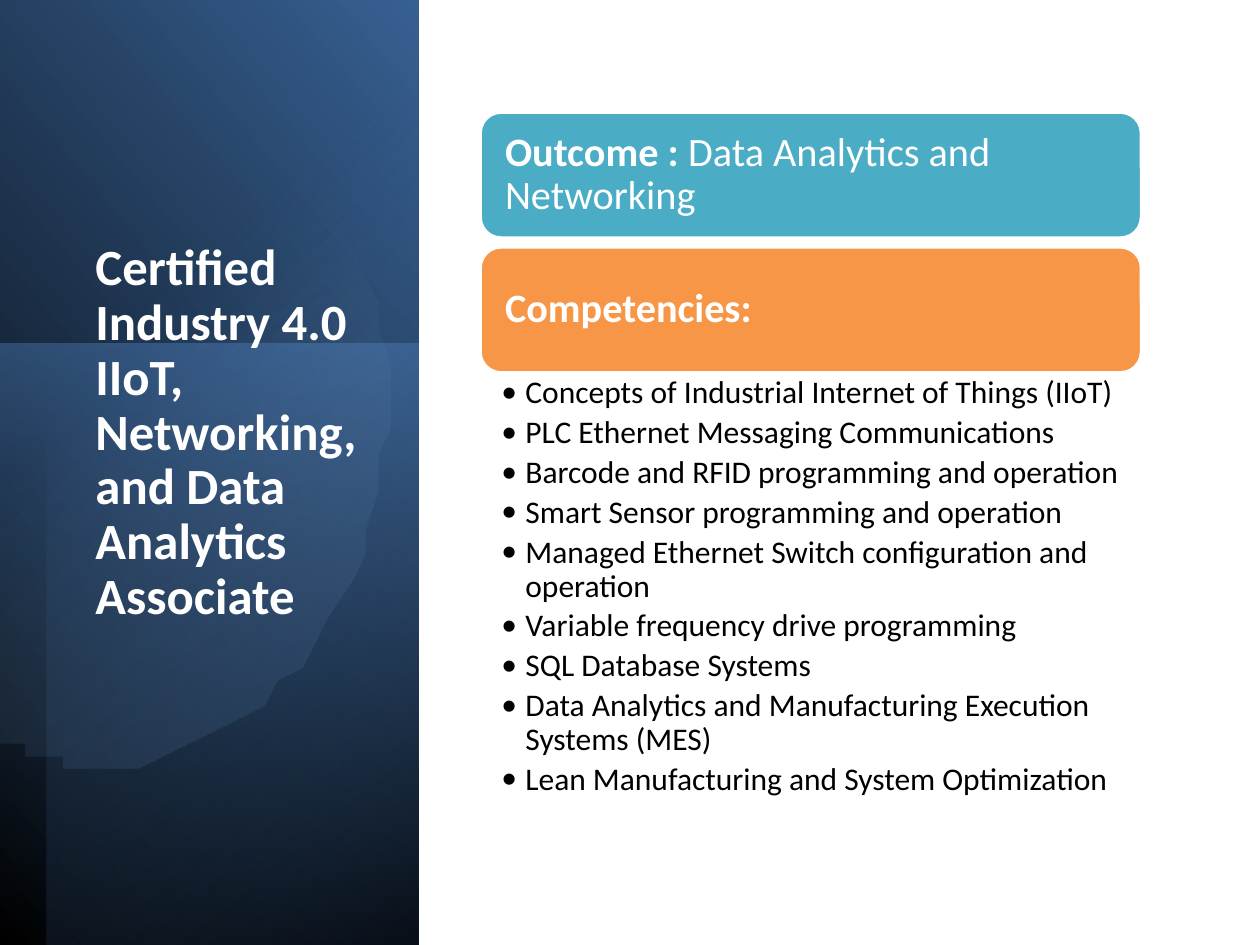
import lxml.etree as etree
import pptx
import pptx.dml.color
import pptx.enum.shapes
import pptx.enum.text
import pptx.oxml.ns
import pptx.util

CELL = pptx.util.Inches(0.1)  # the slide is a grid of 100 columns by 75 rows
COLUMNS, ROWS = 100, 75
FONT = "Calibri"
SHAPES = pptx.enum.shapes.MSO_SHAPE
ANCHOR = pptx.enum.text.MSO_ANCHOR
qn = pptx.oxml.ns.qn

TITLE = "Certified Industry 4.0 IIoT, Networking, and Data Analytics Associate"
BANNERS = [
    ("4BACC6", [("Outcome : ", True), ("Data Analytics and Networking", False)]),
    ("F79646", [("Competencies:", True)]),
]
COMPETENCIES = [
    "Concepts of Industrial Internet of Things (IIoT)",
    "PLC Ethernet Messaging Communications",
    "Barcode and RFID programming and operation",
    "Smart Sensor programming and operation",
    "Managed Ethernet Switch configuration and operation",
    "Variable frequency drive programming",
    "SQL Database Systems",
    "Data Analytics and Manufacturing Execution Systems (MES)",
    "Lean Manufacturing and System Optimization",
]
# Upright box, rotation, mirrored, gradient angle, stops (position, colour, opacity)
PANEL_LAYERS = [
    ((0, 0, 33.2, 75), 90, True, 310, [(0, "000000", 100), (100, "376092", 100)]),
    ((0, 27.3, 33.2, 47.7), 270, False, 190, [(0, "4F81BD", 50), (100, "254061", 0)]),
    ((3.7, 0, 29.5, 75), 270, True, 220, [(0, "000000", 59), (69, "4F81BD", 0)]),
]
ORB_START = (12, 8.9)
ORB_CURVES = [
    [(13.3, 8.8), (14.7, 8.9), (16, 9.1)],
    [(26.7, 11.3), (32.9, 24.7), (30, 38.9)],
    [(27.1, 53.1), (16.1, 62.8), (5.4, 60.7)],
    [(3.4, 60.2), (1.6, 59.4), (0, 58.3)],
]
ORB_END = [(0, 14.5), (2.5, 12.5)]
ORB_CLOSE = [(5.4, 10.4), (8.7, 9.1), ORB_START]


def color(value):
    return pptx.dml.color.RGBColor.from_string(value)


def cells(*values):
    return [int(value * CELL) for value in values]


def set_attributes(target, values):
    for name, value in values.items():
        setattr(target, name, value)


def fill_gradient(shape, angle, stops):
    """Gradient with per-stop opacity, turning with the shape."""
    shape.shadow.inherit = False
    shape.line.fill.background()
    shape.fill.background()
    properties = shape._element.spPr
    gradient = etree.Element(qn("a:gradFill"), rotWithShape="1")
    stop_list = etree.SubElement(gradient, qn("a:gsLst"))
    for position, value, opacity in stops:
        stop = etree.SubElement(stop_list, qn("a:gs"), pos=str(position * 1000))
        rgb = etree.SubElement(stop, qn("a:srgbClr"), val=value)
        etree.SubElement(rgb, qn("a:alpha"), val=str(opacity * 1000))
    etree.SubElement(gradient, qn("a:lin"), ang=str(angle * 60000), scaled="0")
    properties.replace(properties.find(qn("a:noFill")), gradient)


def curve_points(start, first, second, end, steps=16):
    for step in range(1, steps + 1):
        t = step / steps
        weights = ((1 - t) ** 3, 3 * t * (1 - t) ** 2, 3 * t * t * (1 - t), t ** 3)
        yield tuple(
            sum(weight * point[axis] for weight, point in
                zip(weights, (start, first, second, end)))
            for axis in (0, 1)
        )


def add_turned_layer(slide, box, rotation, mirrored, angle, stops):
    """Rectangle that fills the upright box after a quarter turn."""
    left, top, width, height = box
    shift = (height - width) / 2
    layer = slide.shapes.add_shape(
        SHAPES.RECTANGLE, *cells(left - shift, top + shift, height, width))
    layer.rotation = rotation
    if mirrored:
        layer._element.spPr.find(qn("a:xfrm")).set("flipH", "1")
    fill_gradient(layer, angle, stops)


def add_orb(slide):
    points = [ORB_START]
    for curve in ORB_CURVES:
        points.extend(curve_points(points[-1], *curve))
    points.extend(ORB_END)
    points.extend(curve_points(points[-1], *ORB_CLOSE))
    builder = slide.shapes.build_freeform(*points[0], scale=CELL)
    builder.add_line_segments(points[1:], close=True)
    fill_gradient(builder.convert_to_shape(), 52,
                  [(39, "95B3D7", 0), (100, "376092", 26)])


def write_runs(paragraph, runs, size, value):
    paragraph.line_spacing = 0.9
    for words, bold in runs:
        run = paragraph.add_run()
        run.text = words
        set_attributes(run.font, {"name": FONT, "size": pptx.util.Pt(size), "bold": bold})
        run.font.color.rgb = color(value)


def set_frame(frame, anchor, side, edge):
    side, edge = cells(side, edge)
    set_attributes(frame, {
        "word_wrap": True, "vertical_anchor": anchor,
        "margin_left": side, "margin_right": side,
        "margin_top": edge, "margin_bottom": edge,
    })


def add_title(slide, box):
    frame = slide.shapes.add_textbox(*cells(*box)).text_frame
    set_frame(frame, ANCHOR.TOP, 1, 0.5)
    write_runs(frame.paragraphs[0], [(TITLE, True)], 29, "FFFFFF")


def add_banner(slide, box, fill, runs):
    banner = slide.shapes.add_shape(SHAPES.ROUNDED_RECTANGLE, *cells(*box))
    banner.shadow.inherit = False
    banner.fill.solid()
    banner.fill.fore_color.rgb = color(fill)
    banner.line.color.rgb = color("FFFFFF")
    banner.line.width = pptx.util.Pt(2)
    set_frame(banner.text_frame, ANCHOR.MIDDLE, 1.5, 1.5)
    paragraph = banner.text_frame.paragraphs[0]
    paragraph.alignment = pptx.enum.text.PP_ALIGN.LEFT
    write_runs(paragraph, runs, 23, "FFFFFF")


def add_competencies(slide, box):
    frame = slide.shapes.add_textbox(*cells(*box)).text_frame
    set_frame(frame, ANCHOR.TOP, 1.7, 0.3)
    indent = cells(1.9)[0]
    for index, competency in enumerate(COMPETENCIES):
        paragraph = frame.add_paragraph() if index else frame.paragraphs[0]
        properties = paragraph._p.get_or_add_pPr()
        properties.set("marL", str(indent))
        properties.set("indent", str(-indent))
        etree.SubElement(properties, qn("a:buFont"), typeface=FONT)
        etree.SubElement(properties, qn("a:buChar"), char="•")
        paragraph.space_after = pptx.util.Pt(3.3)
        write_runs(paragraph, [(competency, False)], 18, "000000")


def add_title_panel(slide):
    for layer in PANEL_LAYERS:
        add_turned_layer(slide, *layer)
    add_orb(slide)
    add_title(slide, (6.6, 18.7, 23.6, 33.6))


def add_outcomes(slide, box):
    left, top, width, height = box
    banner_height, pitch = 10, 10.7
    for row, (fill, runs) in enumerate(BANNERS):
        add_banner(slide, (left, top + row * pitch, width, banner_height), fill, runs)
    used = pitch * (len(BANNERS) - 1) + banner_height
    add_competencies(slide, (left, top + used, width, height - used))


def main():
    deck = pptx.Presentation()
    deck.slide_width, deck.slide_height = cells(COLUMNS, ROWS)
    slide = deck.slides.add_slide(deck.slide_layouts[6])
    add_title_panel(slide)
    add_outcomes(slide, (38.1, 8.9, 52.5, 57.1))
    deck.save("out.pptx")


if __name__ == "__main__":
    main()
